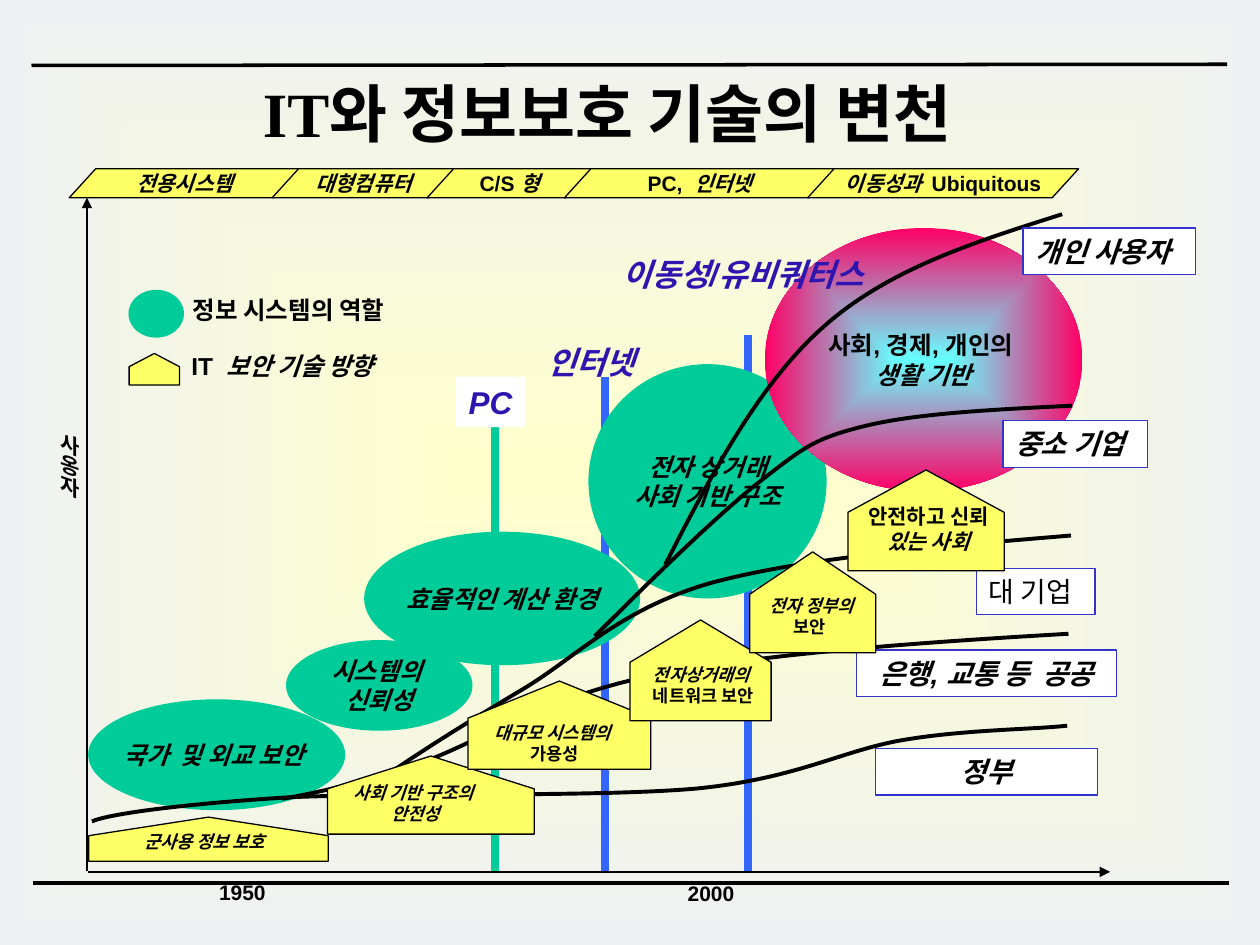
from lxml import etree
from pptx import Presentation
from pptx.dml.color import RGBColor
from pptx.enum.shapes import MSO_CONNECTOR, MSO_SHAPE
from pptx.enum.text import MSO_ANCHOR, MSO_AUTO_SIZE, PP_ALIGN
from pptx.oxml import parse_xml
from pptx.oxml.ns import nsdecls, qn
from pptx.util import Inches, Pt

BLACK = RGBColor(0, 0, 0)
WHITE = RGBColor(255, 255, 255)
CREAM = RGBColor(0xFF, 0xFF, 0xCC)
MIST = RGBColor(0xEE, 0xF1, 0xF2)
GREEN = RGBColor(0x00, 0xCC, 0x99)
BLUE = RGBColor(0x33, 0x66, 0xFF)
INDIGO = RGBColor(0x33, 0x33, 0xCC)
VIOLET = RGBColor(0x2F, 0x15, 0xAF)
YELLOW = RGBColor(0xFF, 0xFF, 0x66)
CYAN = RGBColor(0x66, 0xFF, 0xFF)
PINK = RGBColor(0xFF, 0x00, 0x66)
RECTANGLE, ELLIPSE = MSO_SHAPE.RECTANGLE, MSO_SHAPE.OVAL
PARALLELOGRAM, HOUSE = MSO_SHAPE.PARALLELOGRAM, MSO_SHAPE.PENTAGON
STRAIGHT = MSO_CONNECTOR.STRAIGHT
LEFT, CENTER = PP_ALIGN.LEFT, PP_ALIGN.CENTER
TOP, MIDDLE = MSO_ANCHOR.TOP, MSO_ANCHOR.MIDDLE
FIT = MSO_AUTO_SIZE.SHAPE_TO_FIT_TEXT
FIXED = MSO_AUTO_SIZE.NONE
ITALIC = "*"
COLUMNS, ROWS = 100, 75


class Board:
    def __init__(self, deck):
        self.deck = deck
        self.slide = deck.slides.add_slide(deck.slide_layouts[6])
        self.shapes = self.slide.shapes

    def x(self, columns):
        return round(self.deck.slide_width * columns / COLUMNS)

    def y(self, rows):
        return round(self.deck.slide_height * rows / ROWS)

    def frame(self, area):
        left, top, width, height = area
        return self.x(left), self.y(top), self.x(width), self.y(height)

    def put_text(self, box, text, size=14, color=BLACK, font="Arial", bold=True,
                 align=CENTER, anchor=MIDDLE, wrap=False, grow=False, spacing=None):
        frame = box.text_frame
        layout = {"word_wrap": wrap, "vertical_anchor": anchor,
                  "auto_size": FIT if grow else FIXED}
        for name, value in layout.items():
            setattr(frame, name, value)
        for index, line in enumerate(text.split("\n")):
            para = frame.paragraphs[0] if index == 0 else frame.add_paragraph()
            para.alignment = align
            para.line_spacing = spacing
            for part in line.split("|"):
                span = para.add_run()
                span.text = part.removeprefix(ITALIC)
                style = {"name": font, "size": Pt(size), "bold": bold,
                         "italic": part.startswith(ITALIC)}
                for name, value in style.items():
                    setattr(span.font, name, value)
                span.font.color.rgb = color

    def shape(self, kind, area, fill, outline=None, text=None, adjust=None, **style):
        box = self.shapes.add_shape(kind, *self.frame(area))
        box.shadow.inherit = False
        box.fill.solid()
        box.fill.fore_color.rgb = fill
        if outline is None:
            box.line.fill.background()
        else:
            box.line.color.rgb = outline
            box.line.width = Pt(0.75)
        if adjust is not None:
            box.adjustments[0] = adjust
        if text:
            self.put_text(box, text, **style)
        return box

    def glow(self, kind, area, inner, outer, text=None):
        box = self.shape(kind, area, outer, text=text)
        stops = "".join(f'<a:gs pos="{place}"><a:srgbClr val="{color}"/></a:gs>'
                        for place, color in ((0, inner), (100000, outer)))
        gradient = parse_xml(
            f'<a:gradFill {nsdecls("a")} rotWithShape="1"><a:gsLst>{stops}</a:gsLst>'
            '<a:path path="shape"><a:fillToRect l="50000" t="50000" r="50000" b="50000"/>'
            '</a:path></a:gradFill>')
        properties = box._element.spPr
        properties.replace(properties.find(qn("a:solidFill")), gradient)

    def bubble(self, area, text=None):
        self.shape(ELLIPSE, area, GREEN, text=text)

    def house(self, area):
        left, top, width, height = area
        turned = (left + (width - height) / 2, top + (height - width) / 2, height, width)
        self.shape(HOUSE, turned, YELLOW, BLACK, adjust=0.42).rotation = 270

    def text(self, area, text, vertical=False, **style):
        box = self.shapes.add_textbox(*self.frame(area))
        self.put_text(box, text, **style)
        if vertical:
            box.text_frame._txBody.bodyPr.set("vert", "eaVert")

    def label(self, area, text, **style):
        settings = {"size": 16, "anchor": TOP, "grow": True, "align": LEFT, **style}
        self.shape(RECTANGLE, area, WHITE, INDIGO, text, **settings)

    def line(self, start, end, color=BLACK, width=0.75, arrow=False):
        (x1, y1), (x2, y2) = start, end
        rule = self.shapes.add_connector(STRAIGHT, self.x(x1), self.y(y1), self.x(x2), self.y(y2))
        rule.line.color.rgb = color
        rule.line.width = Pt(width)
        if arrow:
            etree.SubElement(rule.line._get_or_add_ln(), qn("a:tailEnd"), type="triangle")
        etree.SubElement(rule._element.spPr, qn("a:effectLst"))

    def curve(self, *points):
        start, *rest = [(self.x(column), self.y(row)) for column, row in points]
        builder = self.shapes.build_freeform(*start)
        builder.add_line_segments(rest, close=False)
        stroke = builder.convert_to_shape()
        stroke.shadow.inherit = False
        stroke.fill.background()
        stroke.line.color.rgb = BLACK
        stroke.line.width = Pt(2.25)
        outline = next(stroke._element.iter(qn("a:path")))
        steps = outline.findall(qn("a:lnTo"))
        for index in range(0, len(steps), 3):
            bend = etree.SubElement(outline, qn("a:cubicBezTo"))
            for step in steps[index:index + 3]:
                bend.append(step[0])
                outline.remove(step)


def main():
    deck = Presentation()
    deck.slide_width, deck.slide_height = Inches(10), Inches(7.5)
    board = Board(deck)

    board.glow(RECTANGLE, (0, 0, COLUMNS, ROWS), CREAM, MIST)
    board.line((2.5, 5.2), (97.4, 5.1), width=2)
    board.line((2.6, 70.1), (97.5, 70.1), width=2)
    for column, top, bottom, color in ((59.4, 26.6, 69.1, BLUE), (39.3, 30.7, 69.3, GREEN),
                                       (48, 29.9, 69.3, BLUE)):
        board.line((column, top), (column, bottom), color, 4.5)

    board.bubble((28.9, 42.2, 21.9, 10.6), "*효율적인 계산 환경")
    board.line((7, 69.2), (88.1, 69.2), arrow=True)
    board.line((6.9, 69.1), (6.9, 15.7), arrow=True)
    for left, top, year in ((53.6, 69.4, "2000"), (16.4, 69.3, "1950")):
        board.text((left, top, 5.7, 3), year, size=12, align=LEFT, anchor=TOP, grow=True)
    board.text((3.5, 33.2, 4, 18.7), "*사옹자", vertical=True, size=12, align=LEFT,
               anchor=TOP, wrap=True, grow=True)
    board.bubble((7, 55.5, 20.4, 8.8), "*국가  및 외교 보안 ")
    board.bubble((22.7, 50.8, 14.8, 7.2), "*시스템의 \n*신뢰성")
    board.bubble((46.7, 28.9, 18.9, 18.6), "*전자 상거래\n*사회 기반 구조")
    board.glow(ELLIPSE, (60.7, 18.1, 25.2, 20.9), CYAN, PINK, "사회, 경제, 개인의 \n*생활 기반")

    left, overlap = 5.5, 2.2
    for width, era in ((18.3, "*전용시스템"), (14.5, "*대형컴퓨터"), (13.1, "C/S |*형"),
                       (21.5, "PC,  |*인터넷"), (21.5, "*이동성과  |Ubiquitous")):
        board.shape(PARALLELOGRAM, (left, 13.4, width, 2.3), YELLOW, BLACK, era, 0.91, size=12)
        left += width - overlap

    board.curve((22.4, 63.4), (25.2, 62.9), (28, 62.3), (33, 60.7), (37.9, 59), (43.2, 55.3),
                (51.9, 53.6), (60.5, 51.9), (72.7, 51), (84.8, 50.3))
    board.curve((31, 61.3), (34.1, 59.2), (37.3, 57.2), (41.5, 54.7), (45.7, 52.2), (49.1, 48.4),
                (56.3, 46.3), (63.6, 44.3), (74.2, 43.4), (85, 42.5))
    board.curve((47.2, 50.5), (51.9, 45.8), (56.7, 41.1), (60.2, 38.3), (63.8, 35.5),
                (64.6, 34.8), (68.7, 33.8), (72.8, 32.8), (79, 32.5), (85.1, 32.2))
    board.curve((52.8, 44.8), (56.5, 37.6), (60.2, 30.5), (65.4, 25.9), (70.6, 21.3),
                (77.4, 19.2), (84.3, 17))

    board.label((69.5, 59.4, 17.6, 3.7), "*정부", align=CENTER, wrap=True)
    board.label((68, 51.6, 20.6, 3.7), "*은행, 교통 등  공공", align=CENTER)
    board.label((77.5, 45.1, 9.4, 3.7), "대 기업", bold=False)
    board.label((79.6, 33.4, 11.5, 3.7), "*중소 기업")
    board.label((81.2, 18.1, 13.7, 3.7), "*개인 사용자")

    legend = {"align": LEFT, "anchor": TOP, "wrap": True, "grow": True}
    board.bubble((10.2, 23, 4.4, 3.8))
    board.text((14.3, 22.9, 20.1, 3.4), "정보 시스템의 역할", **legend)
    board.house((10.25, 28.05, 4, 2.5))
    board.text((14.2, 27.4, 21, 3.3), "IT  |*보안 기술 방향", **legend)

    board.house((7.05, 64.85, 19, 3.5))
    board.text((11.3, 65.6, 9.8, 2.4), "*군사용 정보 보호", size=10)
    board.curve((7.3, 65.2), (8.6, 64.6), (14.7, 63.8), (22.7, 63.3), (30.7, 62.9), (47, 63.3),
                (55.2, 62.6), (63.4, 61.8), (66.9, 59.5), (71.9, 58.7), (76.8, 57.9),
                (82, 57.9), (84.7, 57.6))
    for area, caption, text, size in (
            ((26, 60, 16.4, 6.2), (28.1, 61.7, 9.8, 4), "*사회 기반 구조의 \n*안전성", 10),
            ((37.15, 54.05, 14.5, 7), (39.1, 57, 9.8, 4), "*대규모 시스템의 \n가용성", 10),
            ((50, 49.2, 11.2, 8), (50.8, 51.6, 10, 5.6), "*전자상거래의 \n네트워크 보안", 10),
            ((59.5, 43.8, 10, 8), (59.4, 46.1, 10, 5.6), "*전자 정부의\n보안 ", 10),
            ((67.3, 37.3, 12.4, 8), (68, 39.4, 11.4, 5.1), "안전하고 신뢰\n*있는 사회", 12)):
        board.house(area)
        board.text(caption, text, size=size)

    milestone = {"size": 18, "color": VIOLET, "anchor": TOP, "grow": True}
    board.text((42.5, 26.7, 9.4, 4), "*인터넷", align=LEFT, **milestone)
    board.shape(RECTANGLE, (36.2, 29.9, 5.5, 4), WHITE, text="*PC", align=LEFT, **milestone)
    board.text((47.7, 20.3, 22.5, 3.4), "*이동성/유비쿼터스", spacing=0.8, **milestone)
    board.text((8.6, 5.4, 79.2, 9.8), "IT와 정보보호 기술의 변천", size=36,
               font="Times New Roman", anchor=TOP, wrap=True)
    deck.save("out.pptx")


if __name__ == "__main__":
    main()
